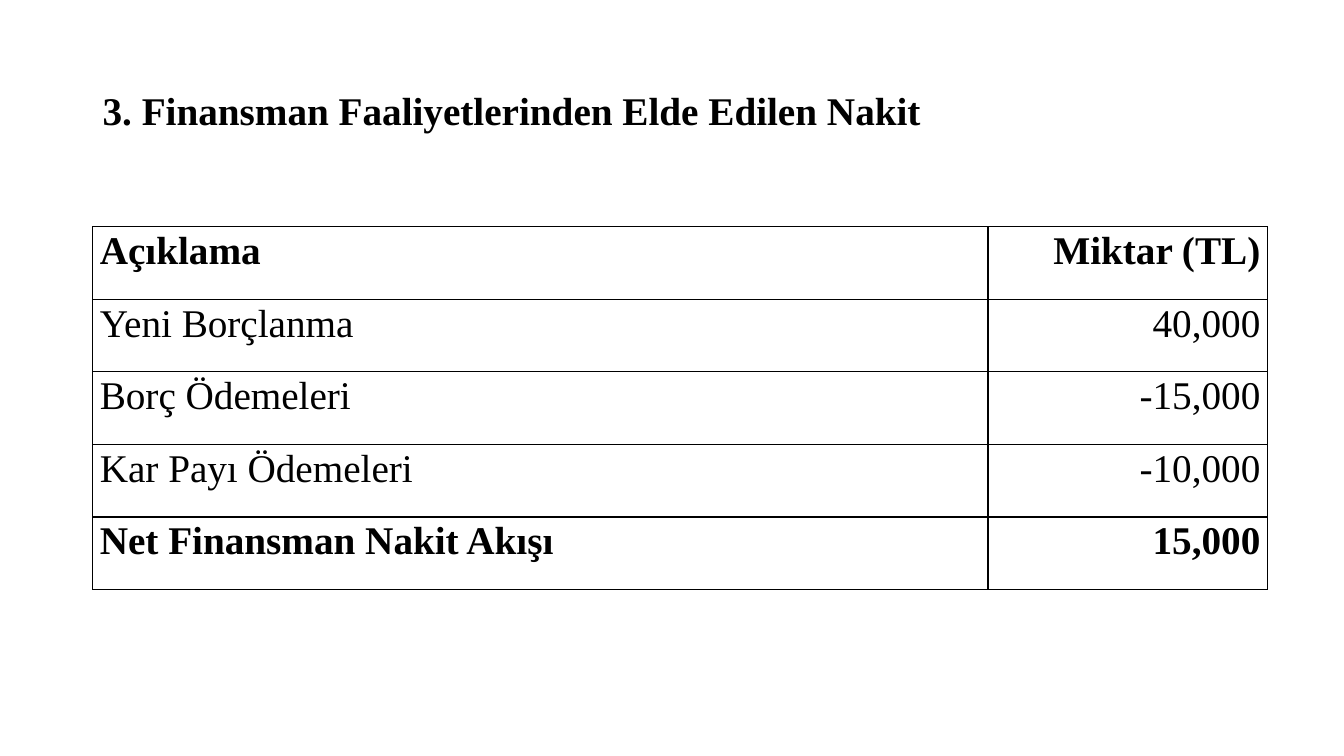
from lxml import etree
from pptx import Presentation
from pptx.dml.color import RGBColor
from pptx.enum.text import MSO_ANCHOR, MSO_AUTO_SIZE, PP_ALIGN
from pptx.oxml.ns import qn
from pptx.util import Pt

JUSTIFY, RIGHT = PP_ALIGN.JUSTIFY, PP_ALIGN.RIGHT
MIDDLE = MSO_ANCHOR.MIDDLE
GROW = MSO_AUTO_SIZE.SHAPE_TO_FIT_TEXT

PX = 9144
COLORS = {"ink": "000000", "paper": "FFFFFF"}

TITLE = "3. Finansman Faaliyetlerinden Elde Edilen Nakit"
CASH_FLOWS = [
    ("Açıklama", "Miktar (TL)"),
    ("Yeni Borçlanma", "40,000"),
    ("Borç Ödemeleri", "-15,000"),
    ("Kar Payı Ödemeleri", "-10,000"),
    ("Net Finansman Nakit Akışı", "15,000"),
]


class SlideBuilder:
    font_name = "Times New Roman"
    font_size = 28

    def __init__(self, slide):
        self.slide = slide

    def paragraph(self, tf, text, align, bold):
        p = tf.paragraphs[0]
        p.text = text
        p.alignment = align
        p.font.name = self.font_name
        p.font.size = Pt(self.font_size)
        p.font.bold = bold
        p.font.color.rgb = RGBColor.from_string(COLORS["ink"])
        return p

    def background(self):
        fill = self.slide.background.fill
        fill.solid()
        fill.fore_color.rgb = RGBColor.from_string(COLORS["paper"])

    def title(self, x, y, w, h, text):
        sp = self.slide.shapes.add_textbox(x * PX, y * PX, w * PX, h * PX)
        tf = sp.text_frame
        tf.word_wrap = True
        tf.auto_size = GROW
        tf.vertical_anchor = MIDDLE
        self.paragraph(tf, text, JUSTIFY, True)

    def borders(self, cell):
        tc_pr = cell._tc.get_or_add_tcPr()
        for i, side in enumerate(("lnL", "lnR", "lnT", "lnB")):
            ln = etree.Element(qn(f"a:{side}"), w=str(Pt(1)))
            fill = etree.SubElement(ln, qn("a:solidFill"))
            etree.SubElement(fill, qn("a:srgbClr"), val=COLORS["ink"])
            tc_pr.insert(i, ln)

    def cell(self, cell, text, align, bold):
        cell.margin_left = cell.margin_right = 7 * PX
        cell.margin_top = cell.margin_bottom = 0
        p = self.paragraph(cell.text_frame, text, align, bold)
        p.line_spacing = 1.07
        p.space_after = Pt(8)
        cell.fill.background()
        self.borders(cell)

    def table(self, x, y, col_widths, row_height, rows):
        w, h = sum(col_widths), row_height * len(rows)
        frame = self.slide.shapes.add_table(
            len(rows), len(col_widths), x * PX, y * PX, w * PX, h * PX)
        table = frame.table
        table.first_row = table.horz_banding = False
        for column, width in zip(table.columns, col_widths):
            column.width = width * PX
        for i, row in enumerate(rows):
            table.rows[i].height = row_height * PX
            bold = i in (0, len(rows) - 1)
            for j, (text, align) in enumerate(zip(row, (JUSTIFY, RIGHT))):
                self.cell(table.cell(i, j), text, align, bold)


def main():
    prs = Presentation()
    prs.slide_width, prs.slide_height = 1333 * PX, 750 * PX
    s = SlideBuilder(prs.slides.add_slide(prs.slide_layouts[6]))
    s.background()
    s.table(92, 225, (888, 277), 72, CASH_FLOWS)
    s.title(92, 80, 1197, 57, TITLE)
    prs.save("out.pptx")


if __name__ == "__main__":
    main()
